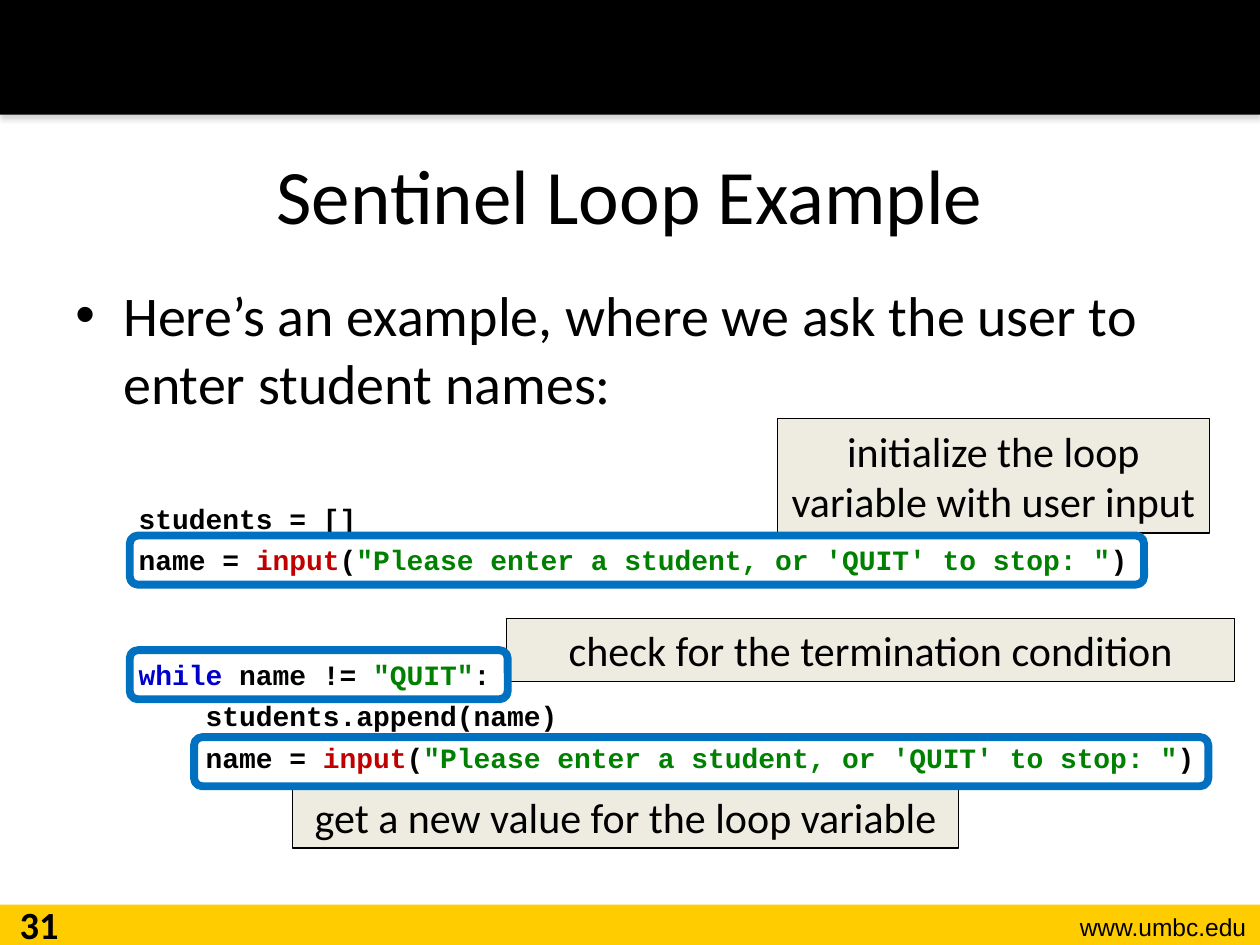
import pptx
import pptx.util
import pptx.dml.color
import pptx.enum.shapes
import pptx.enum.text
import pptx.oxml
import pptx.oxml.ns

Inches, Pt = pptx.util.Inches, pptx.util.Pt
SHAPE = pptx.enum.shapes.MSO_SHAPE
ALIGN = pptx.enum.text.PP_ALIGN
ANCHOR = pptx.enum.text.MSO_ANCHOR

BLACK, GOLD, CREAM, BLUE = "000000", "FFCC00", "EEECE1", "0070C0"
RED, GREEN, KEYWORD = "C00000", "008000", "0000CC"

TITLE = "Sentinel Loop Example"
INTRO = "Here’s an example, where we ask the user to enter student names:"
PROMPT = [("input", RED), ("(", BLACK),
          ("\"Please enter a student, or 'QUIT' to stop: \"", GREEN), (")", BLACK)]
SETUP_CODE = [
    [("students = []", BLACK)],
    [("name = ", BLACK)] + PROMPT,
]
LOOP_CODE = [
    [("while ", KEYWORD), ("name != ", BLACK), ("\"QUIT\"", GREEN), (":", BLACK)],
    [("    students.append(name)", BLACK)],
    [("    name = ", BLACK)] + PROMPT,
]
# callout text, its box, then left, top and width of the highlighted code line
STEPS = [
    ("initialize the loop variable with user input",
     (6.17, 3.32, 3.43, 0.91), (1.03, 4.25, 8.05)),
    ("check for the termination condition",
     (4.02, 4.91, 5.78, 0.5), (1.03, 5.16, 3)),
    ("get a new value for the loop variable",
     (2.32, 6.23, 5.29, 0.5), (1.54, 5.85, 8.05)),
]
HIGHLIGHT_HEIGHT = 0.39
CODE_LEFT, CODE_TOP, CODE_SIZE = 1.1, 3.98, 16
CODE_PITCH = 0.31
LOOP_ROW = 4  # two rows stay open between setup and loop


def rgb(color):
    return pptx.dml.color.RGBColor.from_string(color)


def add_box(slide, kind, box, fill=None, line=None, weight=0.75):
    shape = slide.shapes.add_shape(kind, *map(Inches, box))
    shape.shadow.inherit = False
    if fill:
        shape.fill.solid()
        shape.fill.fore_color.rgb = rgb(fill)
    else:
        shape.fill.background()
    if line:
        shape.line.color.rgb = rgb(line)
        shape.line.width = Pt(weight)
    else:
        shape.line.fill.background()
    return shape


def add_run(paragraph, text, size, font="Calibri", color=BLACK, bold=False):
    run = paragraph.add_run()
    run.text = text
    run.font.size = Pt(size)
    run.font.name = font
    run.font.bold = bold
    run.font.color.rgb = rgb(color)


def add_text(slide, box, text, size, align, anchor=ANCHOR.TOP, **style):
    frame = slide.shapes.add_textbox(*map(Inches, box)).text_frame
    frame.word_wrap = True
    frame.vertical_anchor = anchor
    paragraph = frame.paragraphs[0]
    paragraph.alignment = align
    add_run(paragraph, text, size, **style)
    return paragraph


def add_bullet(paragraph, indent):
    properties = paragraph._p.get_or_add_pPr()
    properties.set("marL", str(Inches(indent)))
    properties.set("indent", str(-Inches(indent)))
    namespace = pptx.oxml.ns.nsdecls("a")
    for tag in ('buFont %s typeface="Arial"', 'buChar %s char="•"'):
        properties.append(pptx.oxml.parse_xml("<a:" + tag % namespace + "/>"))


def add_soft_shadow(shape):
    effects = shape._element.spPr.find(pptx.oxml.ns.qn("a:effectLst"))
    effects.append(pptx.oxml.parse_xml(
        f'<a:outerShdw {pptx.oxml.ns.nsdecls("a")} blurRad="{Pt(3.1)}" dist="{Pt(1.8)}" '
        'dir="5400000" rotWithShape="0"><a:srgbClr val="808080">'
        '<a:alpha val="35000"/></a:srgbClr></a:outerShdw>'))


def add_code(slide, lines, row):
    box = (CODE_LEFT, CODE_TOP + row * CODE_PITCH, 8.7, len(lines) * CODE_PITCH)
    frame = slide.shapes.add_textbox(*map(Inches, box)).text_frame
    frame.word_wrap = False
    frame.margin_left = frame.margin_right = frame.margin_top = frame.margin_bottom = 0
    for number, line in enumerate(lines):
        paragraph = frame.add_paragraph() if number else frame.paragraphs[0]
        if number:
            paragraph.space_before = Pt(4.4)
        for text, color in line:
            add_run(paragraph, text, CODE_SIZE, "Courier New", color, True)


def add_callout(slide, text, box):
    callout = add_box(slide, SHAPE.RECTANGLE, box, CREAM, BLACK)
    callout.text_frame.word_wrap = True
    callout.text_frame.vertical_anchor = ANCHOR.MIDDLE
    paragraph = callout.text_frame.paragraphs[0]
    paragraph.alignment = ALIGN.CENTER
    add_run(paragraph, text, 24)


def main():
    deck = pptx.Presentation()
    deck.slide_width, deck.slide_height = Inches(10), Inches(7.5)
    slide = deck.slides.add_slide(deck.slide_layouts[6])

    add_box(slide, SHAPE.RECTANGLE, (0, 7.18, 10, 0.32), GOLD)
    add_soft_shadow(add_box(slide, SHAPE.RECTANGLE, (0, 0, 10, 0.91), BLACK))
    add_text(slide, (8, 7.19, 1.99, 0.34), "www.umbc.edu", 14, ALIGN.RIGHT, font="Arial")
    add_text(slide, (0.5, 0.91, 9, 1.25), TITLE, 44, ALIGN.CENTER, ANCHOR.MIDDLE)
    intro = add_text(slide, (0.5, 2.18, 9.3, 1.2), INTRO, 32, ALIGN.LEFT)
    add_bullet(intro, 0.38)
    add_text(slide, (0, 7.1, 0.62, 0.4), "31", 22, ALIGN.CENTER, bold=True)

    add_code(slide, SETUP_CODE, 0)
    add_code(slide, LOOP_CODE, LOOP_ROW)
    for text, callout_box, highlight in STEPS:
        add_callout(slide, text, callout_box)
        add_box(slide, SHAPE.ROUNDED_RECTANGLE, (*highlight, HIGHLIGHT_HEIGHT),
                line=BLUE, weight=4.5)
    deck.save("out.pptx")


if __name__ == "__main__":
    main()
